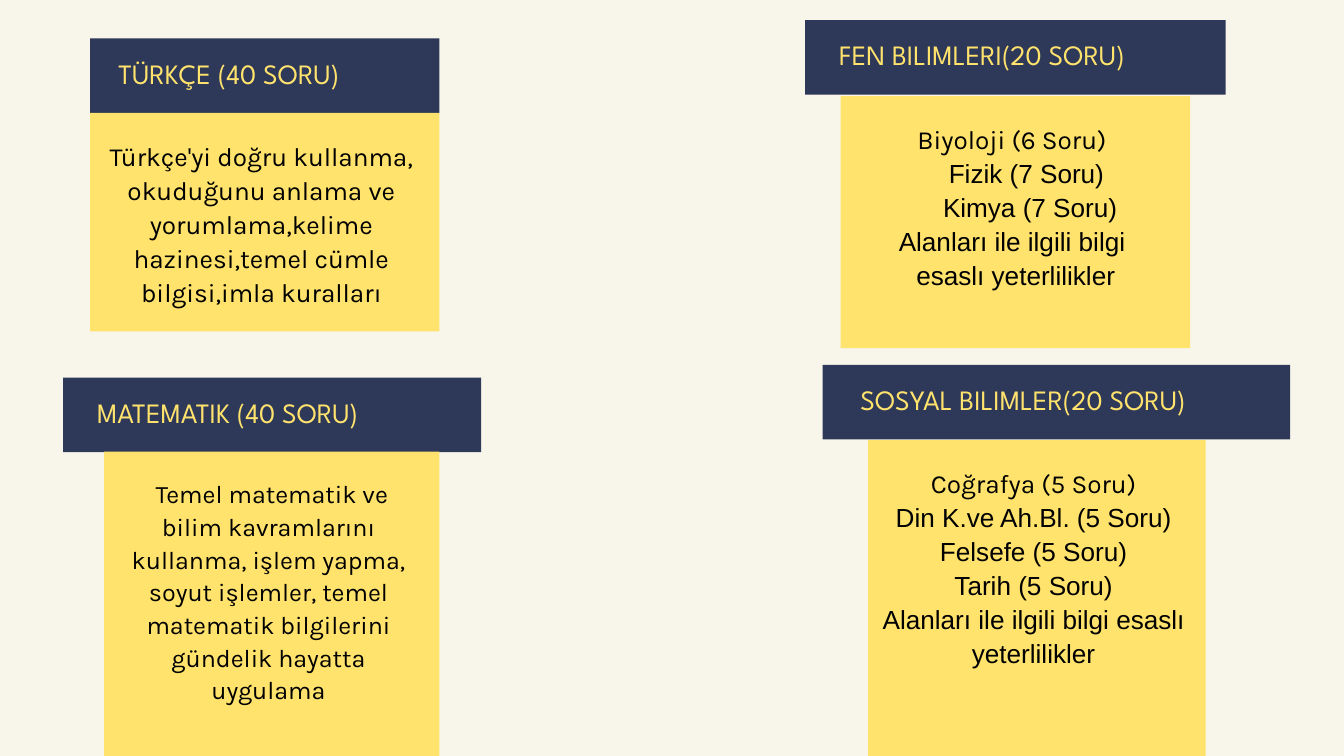
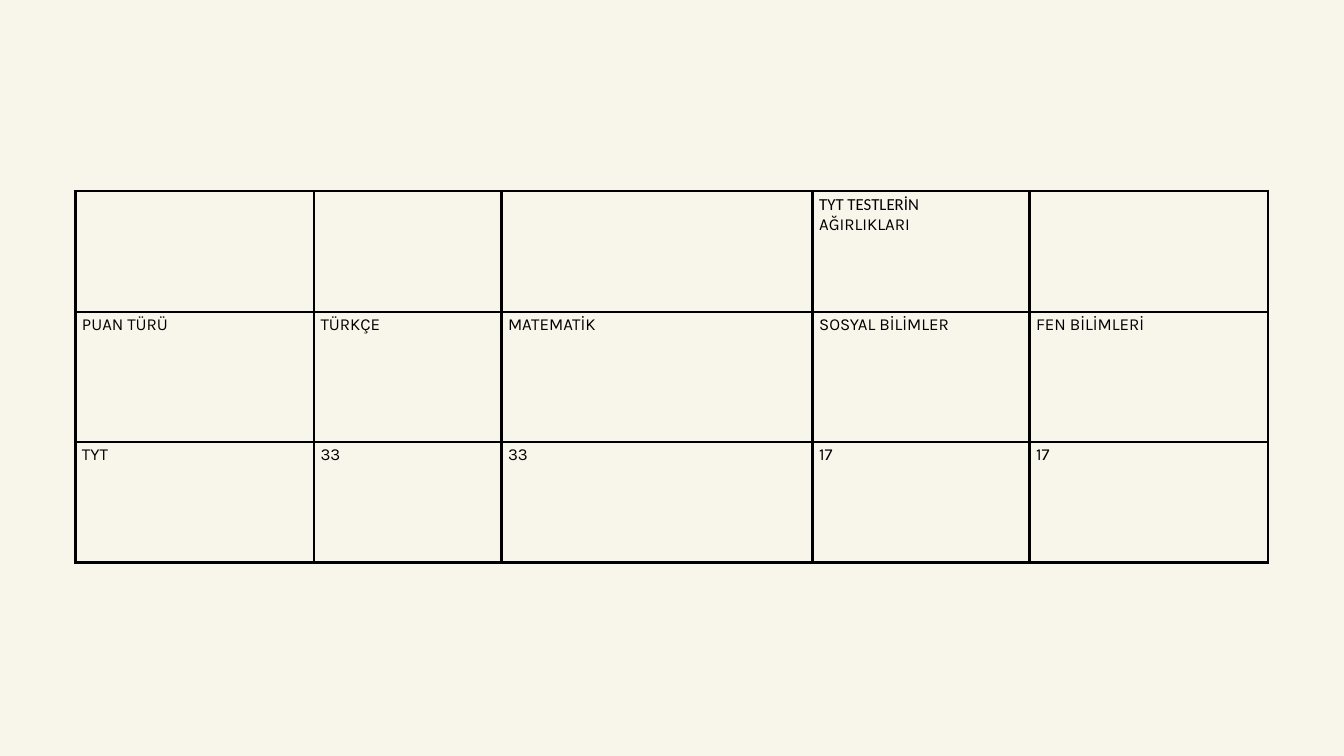
from lxml.etree import SubElement
from pptx import Presentation
from pptx.dml.color import RGBColor
from pptx.enum.shapes import MSO_SHAPE
from pptx.enum.text import MSO_AUTO_SIZE, PP_ALIGN
from pptx.oxml.ns import qn
from pptx.util import Inches, Pt

COLORS = {"cream": "F8F5EA", "navy": "2E3859", "yellow": "FFE36D", "black": "000000"}

SUBJECTS = [
    dict(
        heading="TÜRKÇE (40 SORU)",
        band=(1.34, 0.57, 5.2),
        panel=(1.34, 1.68, 5.2, 3.25),
        lines=[("Türkçe'yi doğru kullanma, okuduğunu anlama ve yorumlama,kelime "
                "hazinesi,temel cümle bilgisi,imla kuralları", "Karla", 0)],
    ),
    dict(
        heading="MATEMATIK (40 SORU)",
        band=(0.94, 5.62, 6.22),
        panel=(1.55, 6.72, 4.99, 4.55),
        lines=[("Temel matematik ve bilim kavramlarını kullanma, işlem yapma, soyut "
                "işlemler, temel matematik bilgilerini gündelik hayatta uygulama",
                "Karla", 0.1)],
        size=26.9,
    ),
    dict(
        heading="FEN BILIMLERI(20 SORU)",
        band=(11.98, 0.3, 6.26),
        panel=(12.51, 1.43, 5.2, 3.75),
        lines=[
            ("Biyoloji (6 Soru)", "Karla", 0),
            ("Fizik (7 Soru)", "Arial", 0.43),
            ("Kimya (7 Soru)", "Arial", 0.54),
            ("Alanları ile ilgili bilgi", "Arial", 0),
            ("esaslı yeterlilikler", "Arial", 0.11),
        ],
    ),
    dict(
        heading="SOSYAL BILIMLER(20 SORU)",
        band=(12.24, 5.43, 6.96),
        panel=(12.92, 6.55, 5.02, 4.72),
        lines=[
            ("Coğrafya (5 Soru)", "Karla", 0),
            ("Din K.ve Ah.Bl. (5 Soru) Felsefe (5 Soru)", "Arial", 0),
            ("Tarih (5 Soru)", "Arial", 0),
            ("Alanları ile ilgili bilgi esaslı yeterlilikler", "Arial", 0),
        ],
    ),
]

WEIGHT_COLUMNS = [3.55, 2.79, 4.63, 3.23, 3.55]
WEIGHT_HEIGHTS = [1.8, 1.94, 1.79]
WEIGHT_ROWS = [
    ["", "", "", "TYT TESTLERİN\nAĞIRLIKLARI", ""],
    ["PUAN TÜRÜ", "TÜRKÇE", "MATEMATİK", "SOSYAL BİLİMLER", "FEN BİLİMLERİ"],
    ["TYT", "33", "33", "17", "17"],
]


def color(name):
    """Return the named palette colour."""
    return RGBColor.from_string(COLORS[name])


def write(para, text, font="Karla", size=18, ink="black", align=None, leading=None, indent=0):
    """Add formatted text to a paragraph."""
    span = para.add_run()
    span.text = text
    span.font.name = font
    span.font.size = Pt(size)
    span.font.color.rgb = color(ink)
    para.alignment = align
    if leading:
        para.line_spacing = Pt(leading)
    if indent:
        properties = para._p.get_or_add_pPr()
        properties.set("marL", "0")
        properties.set("indent", str(Inches(indent)))


class Builder:
    """Holds the deck style and the current slide."""

    def __init__(self):
        """Start a deck with the shared size and background."""
        self.deck = Presentation()
        self.deck.slide_width = Inches(20)
        self.deck.slide_height = Inches(11.25)
        fill = self.deck.slide_master.background.fill
        fill.solid()
        fill.fore_color.rgb = color("cream")
        self.page = None

    def new_page(self):
        """Add an untitled slide and make it current."""
        self.page = self.deck.slides.add_slide(self.deck.slide_layouts[6])

    def block(self, area, fill, text_area, lines, **style):
        """Group a filled rectangle with a text box of (text, font, indent) lines."""
        shapes = self.page.shapes.add_group_shape().shapes
        rectangle = shapes.add_shape(MSO_SHAPE.RECTANGLE, *map(Inches, area))
        rectangle.shadow.inherit = False
        rectangle.fill.solid()
        rectangle.fill.fore_color.rgb = color(fill)
        rectangle.line.fill.background()
        frame = shapes.add_textbox(*map(Inches, text_area)).text_frame
        frame.word_wrap = True
        frame.auto_size = MSO_AUTO_SIZE.SHAPE_TO_FIT_TEXT
        frame.margin_left = frame.margin_right = 0
        frame.margin_top = frame.margin_bottom = 0
        for index, (text, font, indent) in enumerate(lines):
            para = frame.add_paragraph() if index else frame.paragraphs[0]
            write(para, text, font=font, indent=indent, **style)

    def heading_band(self, text, left, top, width):
        """Draw a navy band with a subject heading."""
        inset = 0.081 * width
        self.block(
            (left, top, width, 1.11), "navy",
            (left + inset, top + 0.265, width - 2 * inset, 0.5),
            [(text, "League Spartan", 0)],
            size=30, ink="yellow", leading=36,
        )

    def panel(self, lines, left, top, width, height, size):
        """Draw a yellow panel with centred details."""
        self.block(
            (left, top, width, height), "yellow",
            (left + 0.04 * width, top + 0.365, 0.9 * width, height - 0.76),
            lines, size=size, align=PP_ALIGN.CENTER, leading=round(size * 1.3, 1),
        )

    def border(self, cell, width=3):
        """Outline all four sides of a table cell."""
        properties = cell._tc.get_or_add_tcPr()
        for index, side in enumerate(("lnL", "lnR", "lnT", "lnB")):
            line = SubElement(properties, qn(f"a:{side}"), w=str(Pt(width)))
            fill = SubElement(line, qn("a:solidFill"))
            SubElement(fill, qn("a:srgbClr"), val=COLORS["black"])
            properties.insert(index, line)

    def table(self, left, top, columns, heights, rows):
        """Draw an unfilled table with a full grid."""
        frame = self.page.shapes.add_table(
            len(rows), len(columns), Inches(left), Inches(top),
            Inches(sum(columns)), Inches(sum(heights)))
        table = frame.table
        table.first_row = table.horz_banding = False
        for column, width in zip(table.columns, columns):
            column.width = Inches(width)
        for row, height, texts in zip(table.rows, heights, rows):
            row.height = Inches(height)
            for cell, text in zip(row.cells, texts):
                cell.fill.background()
                self.border(cell)
                lines = text.split("\n") if text else []
                for index, line in enumerate(lines):
                    para = cell.text_frame.add_paragraph() if index else cell.text_frame.paragraphs[0]
                    font = "Calibri" if index < len(lines) - 1 else "Karla"
                    write(para, line, font=font)


def main():
    """Build the subject cards and the table of weights."""
    builder = Builder()
    builder.new_page()
    for subject in SUBJECTS:
        builder.heading_band(subject["heading"], *subject["band"])
        builder.panel(subject["lines"], *subject["panel"], size=subject.get("size", 28))
    builder.new_page()
    builder.table(1.12, 2.84, WEIGHT_COLUMNS, WEIGHT_HEIGHTS, WEIGHT_ROWS)
    builder.deck.save("out.pptx")


if __name__ == "__main__":
    main()
